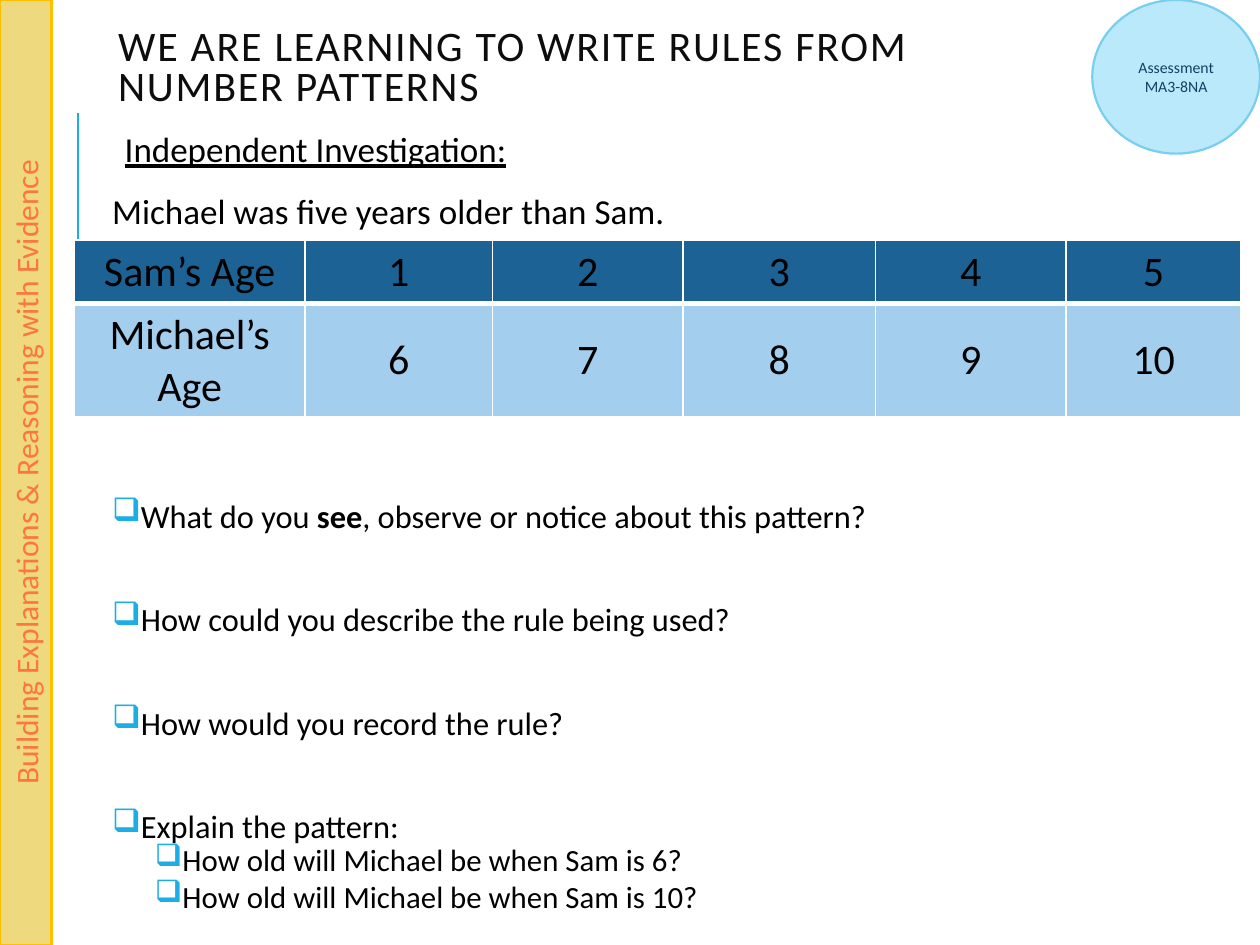
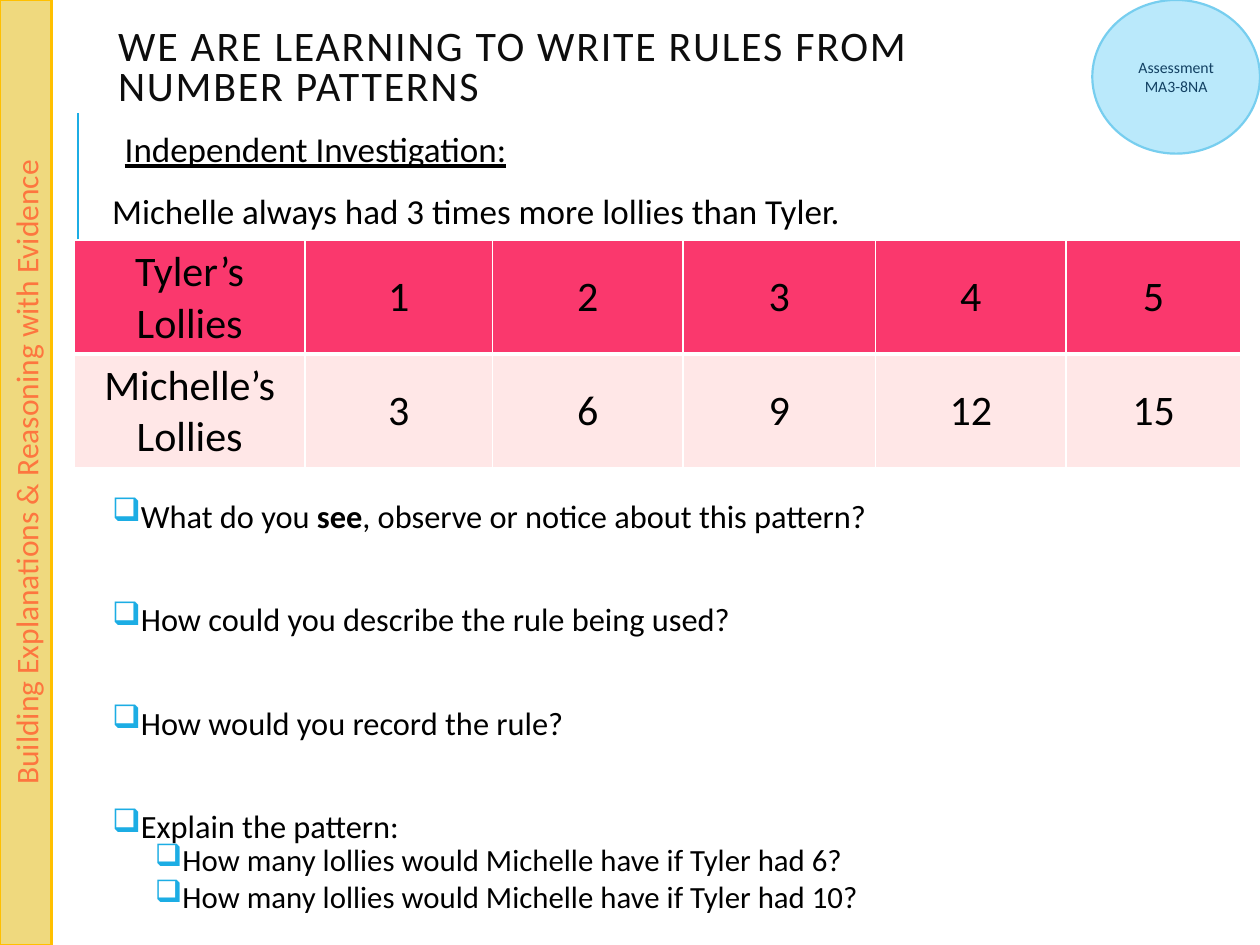
from dataclasses import dataclass

from lxml import etree
from pptx import Presentation
from pptx import util as u
from pptx.dml import color
from pptx.enum import shapes, text
from pptx.oxml import ns

Pt = u.Pt

GOAL = "WE ARE LEARNING TO WRITE RULES FROM NUMBER PATTERNS"
STRAND = "Building Explanations & Reasoning with Evidence"
OUTCOME = "Assessment\nMA3-8NA"
HEADING = "Independent Investigation:"
QUESTIONS = [
    "What do you |see|, observe or notice about this pattern?",
    "How could you describe the rule being used?",
    "How would you record the rule?",
    "Explain the pattern:",
]
INVESTIGATIONS = [
    {
        "statement": "Michael was five years older than Sam.",
        "pattern": [
            ["Sam’s Age", "1", "2", "3", "4", "5"],
            ["Michael’s Age", "6", "7", "8", "9", "10"],
        ],
        "row_fills": ["1D6294", "A3CEED"],
        "predictions": [
            "How old will Michael be when Sam is 6?",
            "How old will Michael be when Sam is 10?",
        ],
    },
    {
        "statement": "Michelle always had 3 times more lollies than Tyler.",
        "pattern": [
            ["Tyler’s Lollies", "1", "2", "3", "4", "5"],
            ["Michelle’s Lollies", "3", "6", "9", "12", "15"],
        ],
        "row_fills": ["FA386D", "FFE7E7"],
        "predictions": [
            "How many lollies would Michelle have if Tyler had 6?",
            "How many lollies would Michelle have if Tyler had 10?",
        ],
    },
]


@dataclass(frozen=True)
class Theme:
    font: str = "Calibri"
    ink: str = "000000"
    goal_ink: str = "0D0D0D"
    accent: str = "1CADE4"
    white: str = "FFFFFF"
    band_fill: str = "EFD97E"
    band_line: str = "FFC000"
    band_ink: str = "FD763F"
    badge_fill: str = "BAE9FB"
    badge_line: str = "77CEEF"
    badge_ink: str = "134163"
    goal_size: float = 24
    intro_size: float = 20
    table_size: float = 24
    band_size: float = 18
    question_size: float = 18.5
    prediction_size: float = 17.6
    badge_size: float = 9


THEME = Theme()
WIDTH, HEIGHT = 720, 540
BODY_LEFT, BODY_WIDTH, BODY_INSET = 60.5, 631.4, 3.6
COLUMN_WIDTHS = [131.8, 107.3, 108.7, 110.2, 108.7, 100.1]
ROW_HEIGHT = 29.5
QUESTION_GAP = 41.6
BULLET = "❑"


def rgb(value):
    return color.RGBColor.from_string(value)


def style_runs(paragraph, size, ink):
    for run in paragraph.runs:
        run.font.name = THEME.font
        run.font.size = Pt(size)
        run.font.color.rgb = rgb(ink)


def space(paragraph, line, before=0, after=0):
    paragraph.line_spacing = line
    paragraph.space_before = Pt(before)
    paragraph.space_after = Pt(after)


def indent(paragraph, left, first=0):
    properties = paragraph._p.get_or_add_pPr()
    properties.set("marL", str(Pt(left)))
    properties.set("indent", str(Pt(first)))
    return properties


def add_bullet(paragraph, left, first):
    properties = indent(paragraph, left, first)
    bullet_color = etree.SubElement(properties, ns.qn("a:buClr"))
    etree.SubElement(bullet_color, ns.qn("a:srgbClr")).set("val", THEME.accent)
    etree.SubElement(properties, ns.qn("a:buChar")).set("char", BULLET)


def add_text_frame(slide, left, top, width, height, inset=None):
    frame = slide.shapes.add_textbox(Pt(left), Pt(top), Pt(width), Pt(height)).text_frame
    frame.word_wrap = True
    if inset is not None:
        frame.margin_left = frame.margin_right = Pt(inset)
        frame.margin_top = frame.margin_bottom = Pt(inset)
    return frame


def add_accent_line(slide):
    accent = slide.shapes.add_connector(
        shapes.MSO_CONNECTOR.STRAIGHT, Pt(44.6), Pt(136.8), Pt(44.6), Pt(64.8))
    accent.line.color.rgb = rgb(THEME.accent)
    accent.line.width = Pt(1.5)
    etree.SubElement(accent._element.spPr, ns.qn("a:effectLst"))


def add_intro(slide, statement):
    frame = add_text_frame(slide, BODY_LEFT, 72, BODY_WIDTH, 73.4, BODY_INSET)
    frame.text = f"{HEADING}\n{statement}"
    for paragraph in frame.paragraphs:
        space(paragraph, 0.9, 12, 2)
        style_runs(paragraph, THEME.intro_size, THEME.ink)
    heading = frame.paragraphs[0]
    indent(heading, 7.2)
    heading.runs[0].font.underline = True


def add_goal(slide):
    frame = add_text_frame(slide, BODY_LEFT, 23, 563.8, 56.9)
    frame.vertical_anchor = text.MSO_ANCHOR.MIDDLE
    frame.margin_bottom = Pt(27)
    frame.text = GOAL
    goal = frame.paragraphs[0]
    space(goal, 0.8)
    style_runs(goal, THEME.goal_size, THEME.goal_ink)
    goal.runs[0]._r.get_or_add_rPr().set("spc", "100")


def add_panel(slide, kind, box, words, fill, line, ink, size):
    panel = slide.shapes.add_shape(kind, *map(Pt, box))
    panel.shadow.inherit = False
    panel.fill.solid()
    panel.fill.fore_color.rgb = rgb(fill)
    panel.line.color.rgb = rgb(line)
    panel.line.width = Pt(1.25)
    frame = panel.text_frame
    frame.word_wrap = True
    frame.vertical_anchor = text.MSO_ANCHOR.MIDDLE
    frame.text = words
    for paragraph in frame.paragraphs:
        paragraph.alignment = text.PP_ALIGN.CENTER
        style_runs(paragraph, size, ink)
    return panel


def add_strand_band(slide):
    band = add_panel(slide, shapes.MSO_SHAPE.RECTANGLE, (0, 0, 29.5, HEIGHT), STRAND,
                     THEME.band_fill, THEME.band_line, THEME.band_ink, THEME.band_size)
    band.text_frame._txBody.bodyPr.set("vert", "vert270")


def add_outcome_badge(slide):
    add_panel(slide, shapes.MSO_SHAPE.OVAL, (624.2, 0, 95.8, 87.8), OUTCOME,
              THEME.badge_fill, THEME.badge_line, THEME.badge_ink, THEME.badge_size)


def set_borders(cell, widths):
    properties = cell._tc.get_or_add_tcPr()
    for position, (side, width) in enumerate(widths.items()):
        border = etree.Element(ns.qn(f"a:ln{side}"), w=str(Pt(width)))
        fill = etree.SubElement(border, ns.qn("a:solidFill"))
        etree.SubElement(fill, ns.qn("a:srgbClr")).set("val", THEME.white)
        properties.insert(position, border)


def add_pattern_table(slide, pattern, row_fills):
    holder = slide.shapes.add_table(len(pattern), len(COLUMN_WIDTHS), Pt(42.5), Pt(137.5),
                                    Pt(sum(COLUMN_WIDTHS)), Pt(129.6))
    table = holder.table
    for column, width in zip(table.columns, COLUMN_WIDTHS):
        column.width = Pt(width)
    for r, (values, fill) in enumerate(zip(pattern, row_fills)):
        table.rows[r].height = Pt(ROW_HEIGHT)
        divider = {"T": 1, "B": 3} if r == 0 else {"T": 3, "B": 1}
        for c, value in enumerate(values):
            cell = table.cell(r, c)
            cell.text = value
            cell.vertical_anchor = text.MSO_ANCHOR.MIDDLE
            cell.fill.solid()
            cell.fill.fore_color.rgb = rgb(fill)
            set_borders(cell, {"L": 1, "R": 1, **divider})
            label = cell.text_frame.paragraphs[0]
            label.alignment = text.PP_ALIGN.CENTER
            style_runs(label, THEME.table_size, THEME.ink)
            label.runs[0].font.bold = False
    holder.height = Pt(129.6)


def add_questions(slide, predictions):
    frame = add_text_frame(slide, BODY_LEFT, 285.8, BODY_WIDTH, 247.7, BODY_INSET)
    for i, question in enumerate(QUESTIONS):
        paragraph = frame.add_paragraph() if i else frame.paragraphs[0]
        for part, words in enumerate(question.split("|")):
            run = paragraph.add_run()
            run.text = words
            run.font.bold = part % 2 == 1
        space(paragraph, 0.7, QUESTION_GAP if i else 12, 2)
        add_bullet(paragraph, 7.2, -7.2)
        style_runs(paragraph, THEME.question_size, THEME.ink)
    for prediction in predictions:
        paragraph = frame.add_paragraph()
        paragraph.text = prediction
        paragraph.level = 1
        space(paragraph, 0.7, 2, 4)
        add_bullet(paragraph, 35.3, -10.8)
        style_runs(paragraph, THEME.prediction_size, THEME.ink)


def main():
    deck = Presentation()
    deck.slide_width, deck.slide_height = Pt(WIDTH), Pt(HEIGHT)
    for investigation in INVESTIGATIONS:
        slide = deck.slides.add_slide(deck.slide_layouts[6])
        add_accent_line(slide)
        add_intro(slide, investigation["statement"])
        add_goal(slide)
        add_strand_band(slide)
        add_outcome_badge(slide)
        add_pattern_table(slide, investigation["pattern"], investigation["row_fills"])
        add_questions(slide, investigation["predictions"])
    deck.save("out.pptx")


if __name__ == "__main__":
    main()
